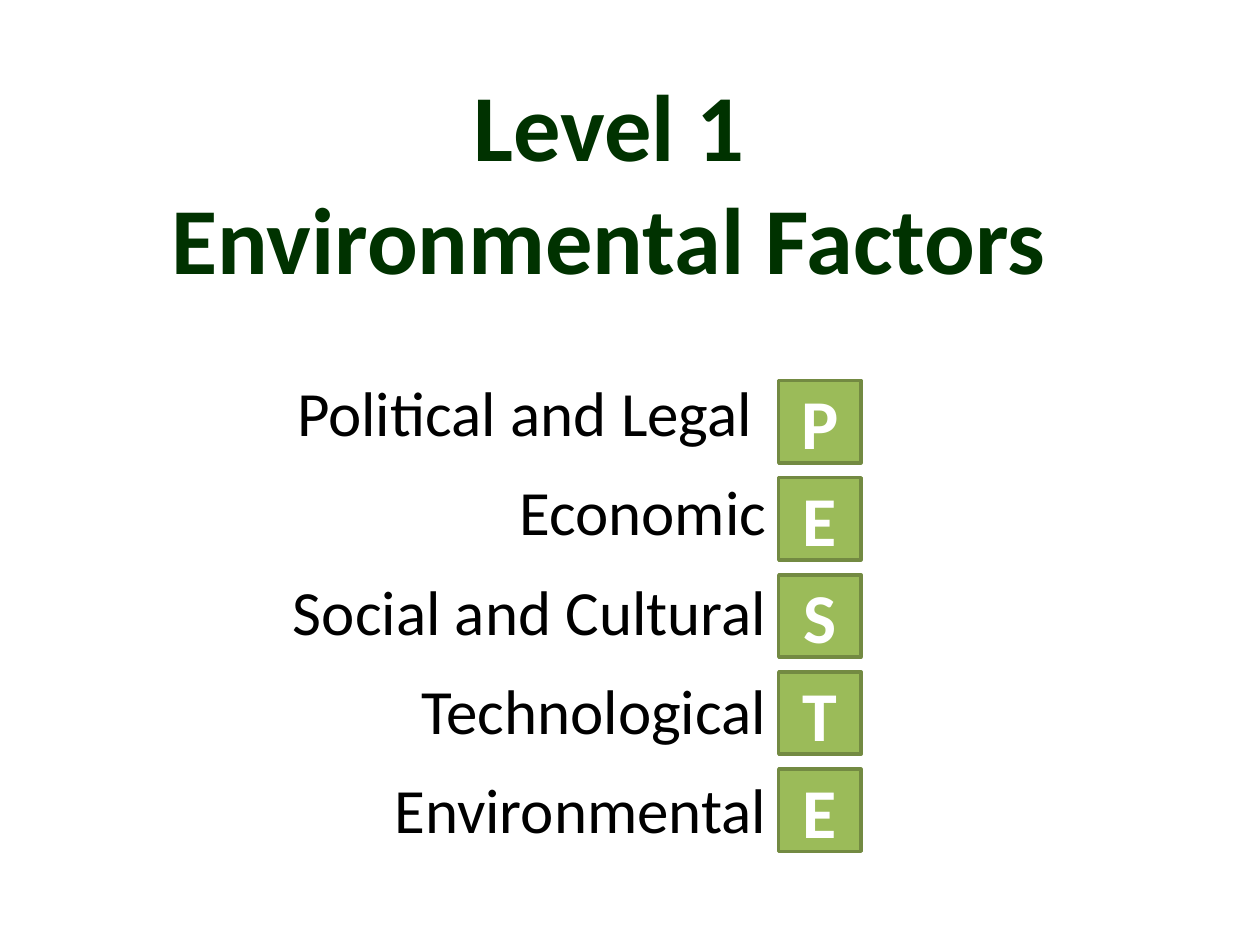
from dataclasses import dataclass

import pptx
import pptx.dml.color
import pptx.enum.shapes
import pptx.enum.text
import pptx.util

Pt = pptx.util.Pt
ALIGN = pptx.enum.text.PP_ALIGN
ANCHOR = pptx.enum.text.MSO_ANCHOR

COLORS = {
    "title": "003200",
    "body": "000000",
    "tile": "9BBB59",
    "border": "738A42",
    "letter": "FFFFFF",
}
TILE_LEFT, TILE_TOP, TILE_SIZE, TILE_PITCH = 445, 217.5, 47, 55.5


@dataclass
class Factor:
    letter: str
    name: str


FACTORS = [
    Factor("P", "Political and Legal "),
    Factor("E", "Economic"),
    Factor("S", "Social and Cultural"),
    Factor("T", "Technological"),
    Factor("E", "Environmental"),
]


def rgb(name: str) -> pptx.dml.color.RGBColor:
    return pptx.dml.color.RGBColor.from_string(COLORS[name])


def write(tf, text: str, *, size: float, color: str, align, anchor=ANCHOR.TOP,
          bold: bool = False, wrap: bool = True, gap: float = 0) -> None:
    tf.word_wrap = wrap
    tf.vertical_anchor = anchor
    for i, line in enumerate(text.split("\n")):
        p = tf.add_paragraph() if i else tf.paragraphs[0]
        p.text = line
        p.alignment = align
        p.space_before = Pt(gap if i else 0)
        p.font.name = "Calibri"
        p.font.size = Pt(size)
        p.font.bold = bold
        p.font.color.rgb = rgb(color)


def add_text(s, left: float, top: float, width: float, height: float,
             text: str, **fmt) -> None:
    sp = s.shapes.add_textbox(Pt(left), Pt(top), Pt(width), Pt(height))
    write(sp.text_frame, text, **fmt)


def add_tile(s, row: int, letter: str) -> None:
    sp = s.shapes.add_shape(
        pptx.enum.shapes.MSO_SHAPE.RECTANGLE, Pt(TILE_LEFT),
        Pt(TILE_TOP + row * TILE_PITCH), Pt(TILE_SIZE), Pt(TILE_SIZE))
    sp.shadow.inherit = False
    sp.fill.solid()
    sp.fill.fore_color.rgb = rgb("tile")
    sp.line.color.rgb = rgb("border")
    sp.line.width = Pt(2)
    write(sp.text_frame, letter, size=40, color="letter", bold=True,
          align=ALIGN.CENTER, anchor=ANCHOR.MIDDLE, wrap=False)


def main() -> None:
    prs = pptx.Presentation()
    prs.slide_width, prs.slide_height = Pt(720), Pt(540)
    s = prs.slides.add_slide(prs.slide_layouts[6])
    add_text(s, 30, 66, 648, 74, "Level 1 \vEnvironmental Factors ", size=54,
             color="title", bold=True, align=ALIGN.CENTER, anchor=ANCHOR.MIDDLE)
    add_text(s, 144, 210, 301, 251, "\n".join(f.name for f in FACTORS), size=36,
             color="body", align=ALIGN.RIGHT, gap=13.5)
    for row, factor in enumerate(FACTORS):
        add_tile(s, row, factor.letter)
    prs.save("out.pptx")


if __name__ == "__main__":
    main()
